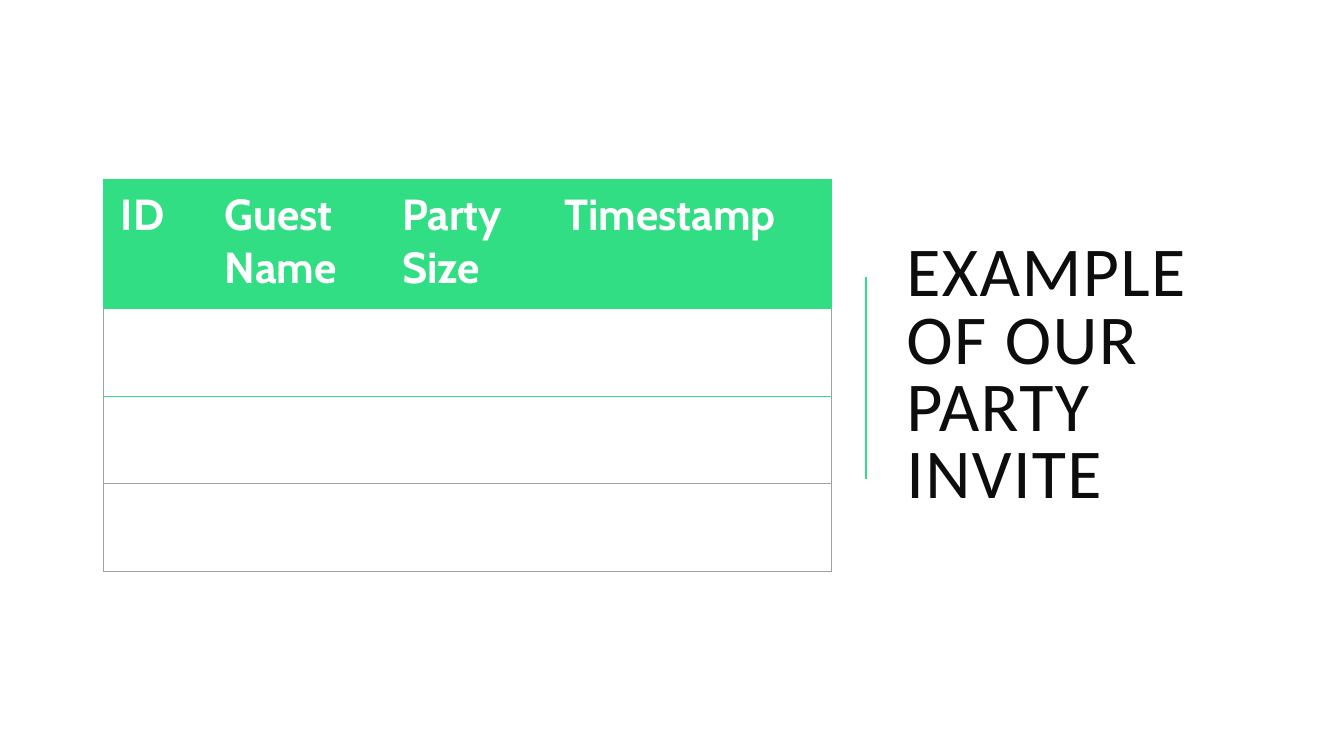
from lxml import etree
from pptx import Presentation
from pptx import util as u
from pptx.dml.color import RGBColor
from pptx.enum import shapes, text
from pptx.oxml.ns import qn

THEME = {
    "green": "32DE84",
    "grey": "A0A0A0",
    "ink": "0D0D0D",
    "white": "FFFFFF",
    "title_font": "Calibri",
    "table_font": "Cabin",
    "title_size": 50,
    "header_size": 31,
    "divider_width": 1.5,
    "border_width": 0.75,
}


def format_run(run, font, size, color, bold):
    run.font.name = font
    run.font.size = u.Pt(size)
    run.font.bold = bold
    run.font.color.rgb = RGBColor.from_string(color)


def add_border(cell, side, color):
    properties = cell._tc.get_or_add_tcPr()
    line = etree.SubElement(properties, qn(f"a:ln{side}"))
    if color is None:
        line.set("w", "0")
        etree.SubElement(line, qn("a:noFill"))
    else:
        line.set("w", str(u.Pt(THEME["border_width"])))
        fill = etree.SubElement(line, qn("a:solidFill"))
        etree.SubElement(fill, qn("a:srgbClr")).set("val", color)


presentation = Presentation()
presentation.slide_width = u.Inches(13.33)
presentation.slide_height = u.Inches(7.5)
slide = presentation.slides.add_slide(presentation.slide_layouts[5])

title = slide.shapes.title
title.left, title.top = u.Inches(8.89), u.Inches(0.7)
title.width, title.height = u.Inches(3.8), u.Inches(6.09)
title.text_frame.text = "EXAMPLE OF OUR PARTY INVITE"
title.text_frame.word_wrap = True
title.text_frame.auto_size = text.MSO_AUTO_SIZE.NONE
title.text_frame.vertical_anchor = text.MSO_ANCHOR.MIDDLE
paragraph = title.text_frame.paragraphs[0]
paragraph.alignment = text.PP_ALIGN.LEFT
paragraph.line_spacing = 0.8
title_run = paragraph.runs[0]
format_run(title_run, THEME["title_font"], THEME["title_size"], THEME["ink"], False)
title_run.font._element.set("spc", "100")

divider = slide.shapes.add_connector(
    shapes.MSO_CONNECTOR.STRAIGHT,
    u.Inches(8.59), u.Inches(4.75), u.Inches(8.59), u.Inches(2.75),
)
divider.line.color.rgb = RGBColor.from_string(THEME["green"])
divider.line.width = u.Pt(THEME["divider_width"])
etree.SubElement(divider._element.spPr, qn("a:effectLst"))

headers = ["ID", "Guest Name", "Party Size", "Timestamp"]
column_widths = [1.03, 1.76, 1.61, 2.82]
row_heights = [1.28, 0.87, 0.87, 0.87]
row_edges = [THEME["green"], THEME["green"], THEME["green"], THEME["grey"], THEME["grey"]]
last_column = len(headers) - 1

table = slide.shapes.add_table(
    len(row_heights), len(headers),
    u.Inches(1.03), u.Inches(1.78), u.Inches(7.21), u.Inches(3.89),
).table
table.horz_banding = False
for column, width in zip(table.columns, column_widths):
    column.width = u.Inches(width)

for row_index, height in enumerate(row_heights):
    table.rows[row_index].height = u.Inches(height)
    is_header = row_index == 0
    side_color = THEME["green"] if is_header else THEME["grey"]
    for column_index, header in enumerate(headers):
        cell = table.cell(row_index, column_index)
        cell.margin_left = cell.margin_right = u.Inches(0.17)
        cell.margin_top = cell.margin_bottom = u.Inches(0.09)
        add_border(cell, "L", side_color if column_index == 0 else None)
        add_border(cell, "R", side_color if column_index == last_column else None)
        add_border(cell, "T", row_edges[row_index])
        add_border(cell, "B", row_edges[row_index + 1])
        if is_header:
            cell.fill.solid()
            cell.fill.fore_color.rgb = RGBColor.from_string(THEME["green"])
            cell.text_frame.text = header
            header_run = cell.text_frame.paragraphs[0].runs[0]
            format_run(header_run, THEME["table_font"], THEME["header_size"], THEME["white"], True)
        else:
            cell.fill.background()

presentation.save("out.pptx")
